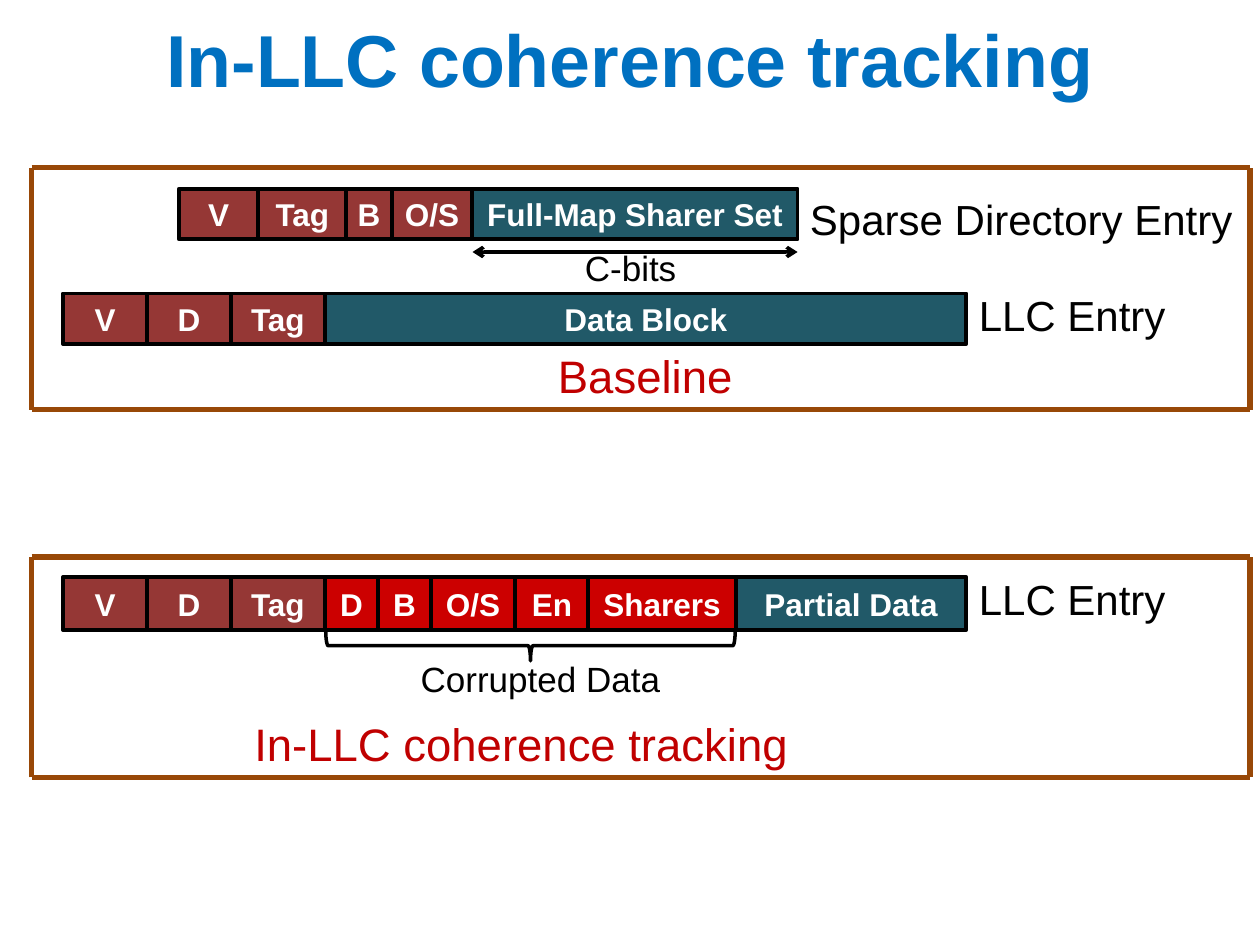
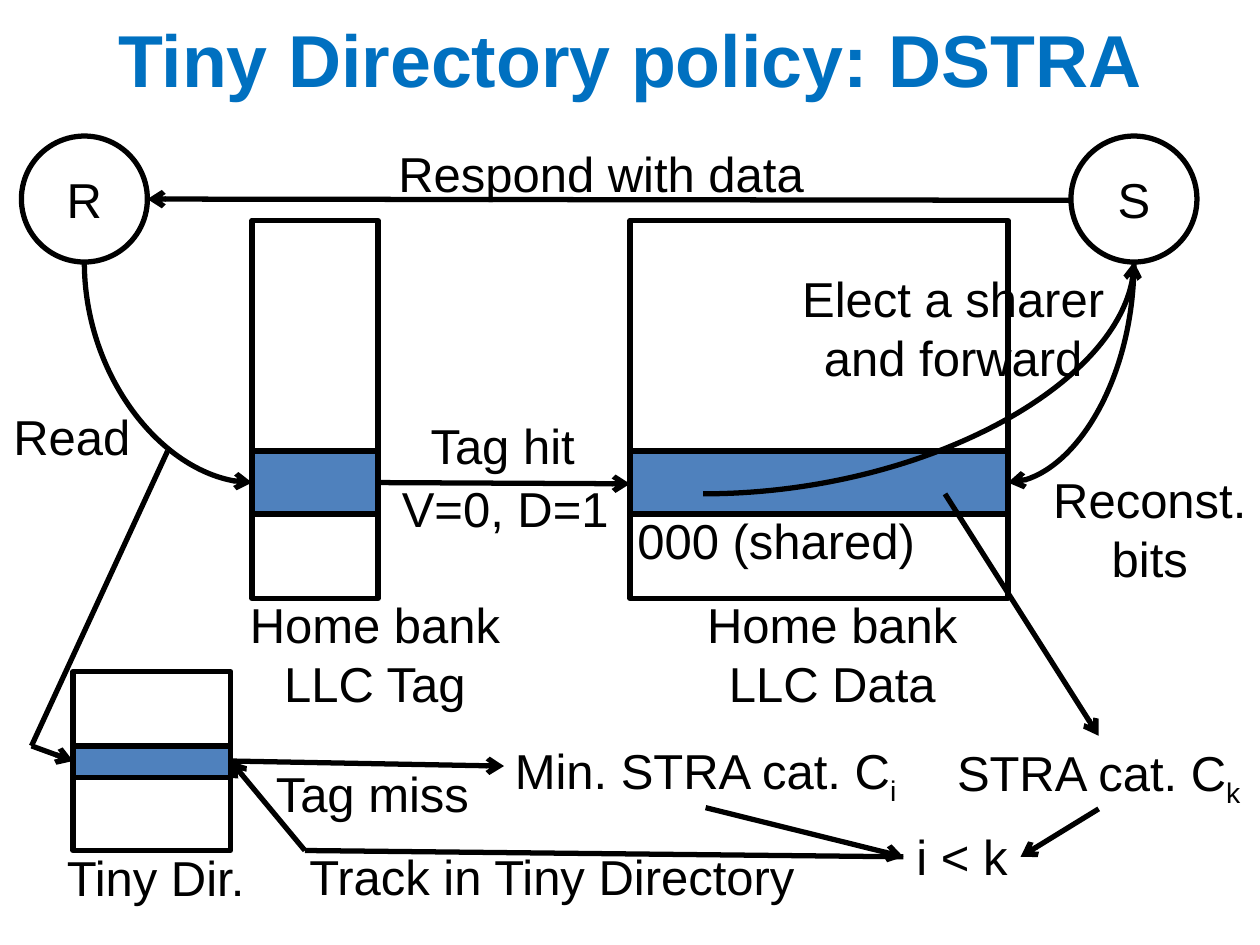
"""Build two slides on coherence tracking in the last-level cache."""
from lxml.etree import SubElement
from pptx import Presentation
from pptx.dml.color import RGBColor
from pptx.enum.shapes import MSO_CONNECTOR, MSO_SHAPE
from pptx.enum.text import MSO_ANCHOR, PP_ALIGN
from pptx.oxml.ns import qn
from pptx.util import Inches, Pt

rgb = RGBColor.from_string
BLACK, WHITE, BLUE = "000000", "FFFFFF", "0070C0"
MAROON, TEAL, RED = "953735", "215968", "CC0000"
BROWN, CRIMSON, STEEL = "984807", "C00000", "4F81BD"
LEFT, CENTER = PP_ALIGN.LEFT, PP_ALIGN.CENTER


def put(slide, kind, at, text="", size=28, color=BLACK, bold=False,
        align=CENTER, fill=None, width=3):
    place = [Inches(v) for v in at]
    if kind is None:
        shape = slide.shapes.add_textbox(*place)
    else:
        shape = slide.shapes.add_shape(kind, *place)
        shape.shadow.inherit = False
        shape.line.color.rgb = rgb(BLACK)
        shape.line.width = Pt(width)
        if fill:
            shape.fill.solid()
            shape.fill.fore_color.rgb = rgb(fill)
        else:
            shape.fill.background()
    frame = shape.text_frame
    frame.word_wrap = align == LEFT
    frame.text = text
    for para in frame.paragraphs:
        para.alignment = align
        para.font.name = "Arial"
        para.font.size = Pt(size)
        para.font.bold = bold
        para.font.color.rgb = rgb(color)
    return shape


def link(slide, ends, tips=(), color=BLACK, width=3, curve=False):
    kind = MSO_CONNECTOR.CURVE if curve else MSO_CONNECTOR.STRAIGHT
    line = slide.shapes.add_connector(kind, *[Inches(v) for v in ends])
    line.line.color.rgb = rgb(color)
    line.line.width = Pt(width)
    props = line.element.spPr
    if curve:
        props.find(qn("a:prstGeom")).set("prst", "curvedConnector2")
    for tip in tips:
        SubElement(props.find(qn("a:ln")), qn(f"a:{tip}End")).set("type", "arrow")
    SubElement(props, qn("a:effectLst"))


deck = Presentation()
deck.slide_width, deck.slide_height = Inches(10), Inches(7.5)
slides = []
for name in ("In-LLC coherence tracking", "Tiny Directory policy: DSTRA"):
    slide = deck.slides.add_slide(deck.slide_layouts[5])
    title = slide.shapes.title
    title.left, title.top = Inches(0), Inches(0)
    title.width, title.height = Inches(10), Inches(0.92)
    title.text = name
    title.text_frame.vertical_anchor = MSO_ANCHOR.MIDDLE
    para = title.text_frame.paragraphs[0]
    para.alignment = CENTER
    para.font.name, para.font.size, para.font.bold = "Arial", Pt(42), True
    para.font.color.rgb = rgb(BLUE)
    slides.append(slide)
entry, policy = slides

rows = [
    (1.42, 1.5, 0.4, [("V", 0.63, MAROON), ("Tag", 0.7, MAROON), ("B", 0.36, MAROON),
                      ("O/S", 0.64, MAROON), ("Full-Map Sharer Set", 2.58, TEAL)]),
    (0.5, 2.33, 0.4, [("V", 0.67, MAROON), ("D", 0.66, MAROON), ("Tag", 0.75, MAROON),
                      ("Data Block", 5.09, TEAL)]),
    (0.5, 4.58, 0.42, [("V", 0.67, MAROON), ("D", 0.66, MAROON), ("Tag", 0.75, MAROON),
                       ("D", 0.42, RED), ("B", 0.42, RED), ("O/S", 0.67, RED),
                       ("En", 0.58, RED), ("Sharers", 1.17, RED),
                       ("Partial Data", 1.83, TEAL)]),
]
for x, y, high, cells in rows:
    for text, wide, fill in cells:
        put(entry, MSO_SHAPE.RECTANGLE, (x, y, wide, high), text, 18, WHITE, True,
            fill=fill, width=2.25)
        x += wide

for at, text, size, color, align in [
    ((6.33, 1.49, 3.58, 0.5), "Sparse Directory Entry", 24, BLACK, LEFT),
    ((7.67, 2.25, 1.83, 0.5), "LLC Entry", 24, BLACK, LEFT),
    ((7.67, 4.5, 1.92, 0.5), "LLC Entry", 24, BLACK, LEFT),
    ((3.92, 1.91, 2.17, 0.44), "C-bits", 20, BLACK, CENTER),
    ((2.83, 5.17, 2.92, 0.44), "Corrupted Data", 20, BLACK, CENTER),
    ((4.33, 2.71, 1.67, 0.54), "Baseline", 26, CRIMSON, LEFT),
    ((1.92, 5.63, 4.5, 0.54), "In-LLC coherence tracking", 26, CRIMSON, LEFT),
]:
    put(entry, None, at, text, size, color, align=align)

link(entry, (3.75, 2, 6.33, 2), ("head", "tail"), width=2)
brace = put(entry, MSO_SHAPE.RIGHT_BRACE, (4.09, 3.5, 0.24, 3.25), width=2)
brace.rotation = 90
for top, low in ((1.33, 3.25), (4.42, 6.17)):
    for y in (top, low):
        link(entry, (0.25, y, 9.92, y), color=BROWN)
    for x in (0.25, 9.92):
        link(entry, (x, low, x, top), color=BROWN)

for at, band, thick in [
    ((2, 1.75, 1, 3), 3.58, 0.5),
    ((5, 1.75, 3, 3), 3.58, 0.5),
    ((0.58, 5.33, 1.25, 1.42), 5.92, 0.25),
]:
    put(policy, MSO_SHAPE.RECTANGLE, at)
    put(policy, MSO_SHAPE.RECTANGLE, (at[0], band, at[2], thick), fill=STEEL)
for x, text in ((0.17, "R"), (8.5, "S")):
    put(policy, MSO_SHAPE.OVAL, (x, 1.08, 1, 1), text)

for ends, tip in [
    ((2, 3.83, 0.67, 2.08), "head"),
    ((5.58, 3.92, 9, 2.08), "tail"),
    ((8, 3.83, 9, 2.08), "head"),
]:
    link(policy, ends, (tip,), curve=True)
for ends in [
    (3, 3.83, 5, 3.84), (8.5, 1.59, 1.17, 1.58), (1.83, 6.04, 4, 6.08),
    (7.5, 3.92, 8.72, 5.84), (5.6, 6.41, 7.17, 6.8), (8.72, 6.42, 8.1, 6.8),
    (2.42, 6.75, 1.83, 6.04), (0.25, 5.92, 0.58, 6.04),
]:
    link(policy, ends, ("tail",))
for ends in ((7.17, 6.8, 2.42, 6.75), (1.33, 3.58, 0.25, 5.92)):
    link(policy, ends)

for at, text in [
    ((1.87, 4.67, 2.21, 1.04), "Home bank\nLLC Tag"),
    ((5.5, 4.67, 2.21, 1.04), "Home bank\nLLC Data"),
    ((0, 3.18, 1.14, 0.57), "Read"),
    ((3.08, 3.75, 1.86, 0.57), "V=0, D=1"),
    ((3.31, 3.25, 1.36, 0.57), "Tag hit"),
    ((6.25, 2.08, 2.63, 1.04), "Elect a sharer\nand forward"),
    ((4.94, 4, 2.44, 0.57), "000 (shared)"),
    ((3.04, 1.09, 3.46, 0.57), "Respond with data"),
    ((8.25, 3.68, 1.75, 1.04), "Reconst.\nbits"),
    ((2.08, 6.01, 1.75, 0.57), "Tag miss"),
    ((7.17, 6.51, 0.93, 0.57), "i < k"),
    ((2.33, 6.67, 4.1, 0.57), "Track in Tiny Directory"),
    ((0.42, 6.68, 1.63, 0.57), "Tiny Dir."),
]:
    put(policy, None, at, text)
for at, text, sub in [
    ((3.95, 5.83, 3.3, 0.57), "Min. STRA cat. C", "i"),
    ((7.44, 5.84, 2.56, 0.57), "STRA cat. C", "k"),
]:
    run = put(policy, None, at, text).text_frame.paragraphs[0].add_run()
    run.text = sub
    run._r.get_or_add_rPr().set("baseline", "-25000")

deck.save("out.pptx")
